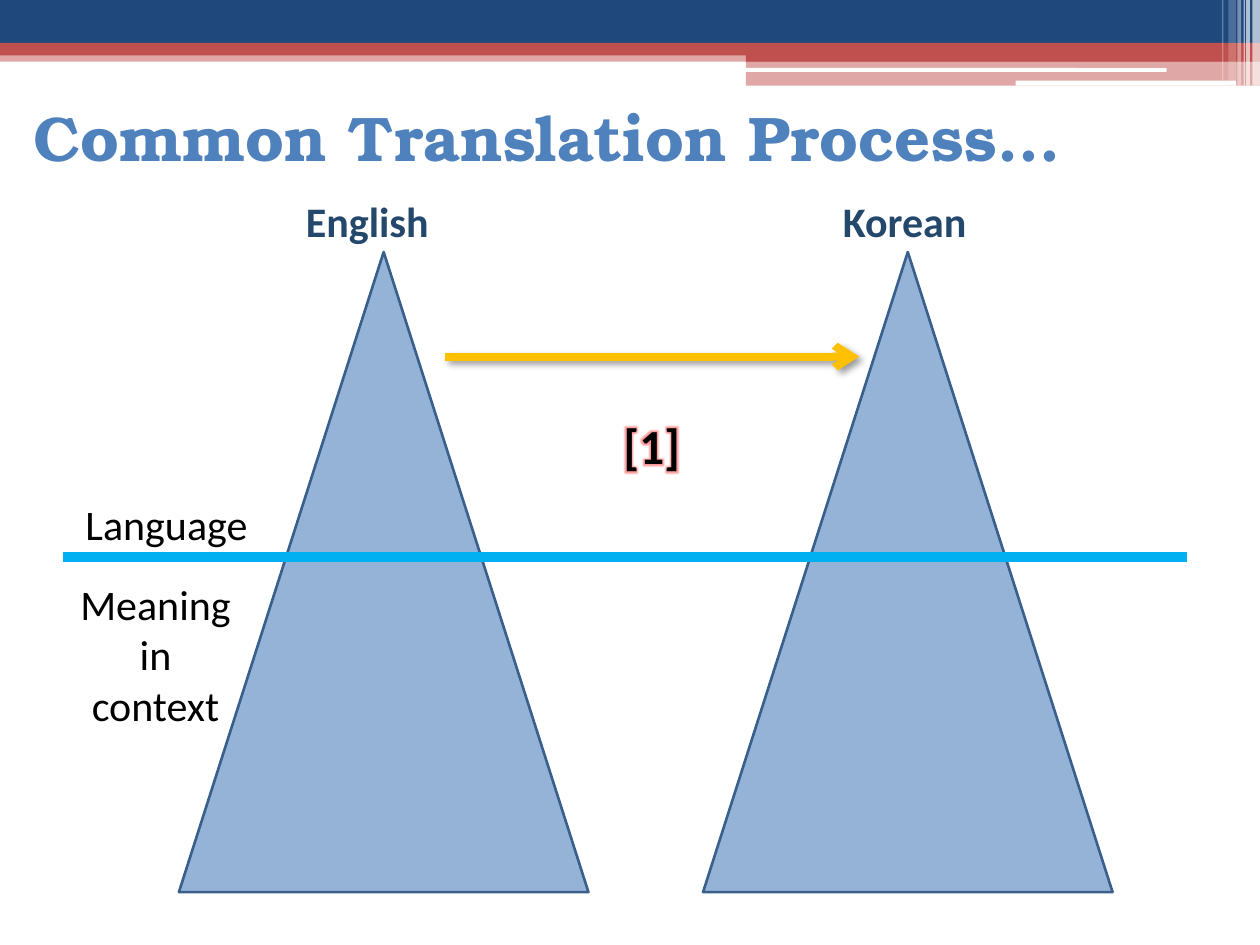
from dataclasses import dataclass

from lxml import etree
from pptx import Presentation
from pptx.dml.color import RGBColor
from pptx.enum.shapes import MSO_CONNECTOR, MSO_SHAPE
from pptx.enum.text import MSO_ANCHOR, MSO_AUTO_SIZE, PP_ALIGN
from pptx.oxml.ns import qn
from pptx.util import Inches, Pt

RECTANGLE = MSO_SHAPE.RECTANGLE
ROUNDED = MSO_SHAPE.ROUNDED_RECTANGLE
TRIANGLE = MSO_SHAPE.ISOSCELES_TRIANGLE
STRAIGHT = MSO_CONNECTOR.STRAIGHT
LEFT, CENTER = PP_ALIGN.LEFT, PP_ALIGN.CENTER
TOP, MIDDLE = MSO_ANCHOR.TOP, MSO_ANCHOR.MIDDLE
FIT_SHAPE = MSO_AUTO_SIZE.SHAPE_TO_FIT_TEXT
NO_FIT = MSO_AUTO_SIZE.NONE


@dataclass(frozen=True)
class Theme:
    navy: str = "1F497D"
    red: str = "C0504D"
    white: str = "FFFFFF"
    black: str = "000000"
    title: str = "4F81BD"
    heading: str = "24486C"
    triangle: str = "95B3D7"
    outline: str = "3A5F8C"
    divider: str = "00B0F0"
    arrow: str = "FFC000"
    glow: str = "FF0000"
    title_font: str = "TeX Gyre Bonum"
    body_font: str = "Calibri"
    title_size: int = 36
    step_size: int = 28
    label_size: int = 24


@dataclass(frozen=True)
class Box:
    left: float
    top: float
    width: float
    height: float

    def inside(self, left, top, width, height):
        return Box(self.left + left, self.top + top, width, height)

    def lengths(self):
        return [Inches(value) for value in (self.left, self.top, self.width, self.height)]


THEME = Theme()


def add_color(parent, color, opacity):
    element = etree.SubElement(parent, qn("a:srgbClr"), val=color)
    etree.SubElement(element, qn("a:alpha"), val=str(opacity * 1000))


def add_block(slide, kind, box, color, opacity=100):
    shape = slide.shapes.add_shape(kind, *box.lengths())
    shape.shadow.inherit = False
    shape.fill.solid()
    shape.fill.fore_color.rgb = RGBColor.from_string(color)
    shape.line.fill.background()
    if opacity < 100:
        color_element = shape.fill._xPr.find(qn("a:solidFill"))[0]
        etree.SubElement(color_element, qn("a:alpha"), val=str(opacity * 1000))
    return shape


def add_text(slide, box, text, size, color=THEME.black, bold=False, font=THEME.body_font,
             wrap=False, align=LEFT, anchor=TOP, fit=FIT_SHAPE):
    shape = slide.shapes.add_textbox(*box.lengths())
    frame = shape.text_frame
    frame.text = text
    frame.word_wrap = wrap
    frame.auto_size = fit
    frame.vertical_anchor = anchor
    paragraph = frame.paragraphs[0]
    paragraph.alignment = align
    run = paragraph.runs[0]
    run.font.name = font
    run.font.size = Pt(size)
    run.font.bold = bold
    run.font.color.rgb = RGBColor.from_string(color)
    return run


def add_line(slide, box, color, width):
    left, top, length, height = box.lengths()
    connector = slide.shapes.add_connector(STRAIGHT, left, top, left + length, top + height)
    connector.line.color.rgb = RGBColor.from_string(color)
    connector.line.width = Pt(width)
    effects = etree.SubElement(connector._element.spPr, qn("a:effectLst"))
    return connector, effects


def add_banner(slide, box):
    accent_left = 5.92
    accent_width = box.width - accent_left
    bands = [
        (0, 0.4, box.width, 0.09, THEME.red, 50),
        (0, 0, box.width, 0.34, THEME.navy, 100),
        (0, 0.34, box.width, 0.1, THEME.red, 100),
        (accent_left, 0.39, accent_width, 0.1, THEME.red, 100),
        (accent_left, 0.48, accent_width, 0.2, THEME.red, 50),
    ]
    for left, top, width, height, color, opacity in bands:
        add_block(slide, RECTANGLE, box.inside(left, top, width, height), color, opacity)

    for left, top, width, height in [(5.91, 0.54, 3.35, 0.03), (8.06, 0.64, 1.75, 0.04)]:
        add_block(slide, ROUNDED, box.inside(left, top, width, height), THEME.white)

    stripes = [
        (9.94, 0.06, 0.68, 65),
        (9.89, 0.03, 0.68, 65),
        (9.87, 0.01, 0.68, 60),
        (9.82, 0.03, 0.68, 40),
        (9.75, 0.06, 0.64, 20),
        (9.7, 0.01, 0.64, 30),
    ]
    for left, width, height, opacity in stripes:
        add_block(slide, RECTANGLE, box.inside(left, 0, width, height), THEME.white, opacity)


def add_title(slide, box):
    add_text(slide, box, "Common Translation Process…", THEME.title_size, THEME.title, True,
             THEME.title_font, wrap=True, anchor=MIDDLE, fit=NO_FIT)


def add_triangle(slide, box):
    triangle = add_block(slide, TRIANGLE, box, THEME.triangle)
    triangle.line.color.rgb = RGBColor.from_string(THEME.outline)
    triangle.line.width = Pt(1.5)


def add_levels(slide, box):
    add_line(slide, box.inside(0, 0.51, box.width, 0), THEME.divider, 6)
    add_text(slide, box.inside(0.08, 0, 1.53, 0.5), "Language", THEME.label_size)
    add_text(slide, box.inside(-0.03, 0.63, 1.53, 1.31), "Meaning in context",
             THEME.label_size, wrap=True, align=CENTER)


def add_transfer(slide, box):
    arrow, effects = add_line(slide, box.inside(0, 0, box.width, 0), THEME.arrow, 4.5)
    etree.SubElement(arrow.line._get_or_add_ln(), qn("a:tailEnd"), type="arrow")
    shadow = etree.SubElement(effects, qn("a:outerShdw"), blurRad=str(Pt(4)),
                              dist=str(Pt(3)), dir=str(45 * 60000), rotWithShape="0")
    add_color(shadow, THEME.black, 40)

    step = add_text(slide, box.inside(1.32, 0.42, 0.66, 0.57), "[1]", THEME.step_size, bold=True)
    glow_effects = etree.Element(qn("a:effectLst"))
    glow = etree.SubElement(glow_effects, qn("a:glow"), rad=str(Pt(5)))
    add_color(glow, THEME.glow, 40)
    step.font._element.find(qn("a:solidFill")).addnext(glow_effects)


def add_diagram(slide, box):
    languages = [("English", 0.92, 1.83, 1.38), ("Korean", 5.08, 6.09, 1.32)]
    for name, triangle_left, label_left, label_width in languages:
        add_triangle(slide, box.inside(triangle_left, 0.5, 3.25, 5.08))
        add_text(slide, box.inside(label_left, 0, label_width, 0.5), name,
                 THEME.label_size, THEME.heading, True)
    add_levels(slide, box.inside(0, 2.41, box.width, 1.94))
    add_transfer(slide, box.inside(3.03, 1.33, 3.29, 0.99))


def main():
    presentation = Presentation()
    presentation.slide_width = Inches(10)
    presentation.slide_height = Inches(7.5)
    slide = presentation.slides.add_slide(presentation.slide_layouts[6])
    add_banner(slide, Box(0, 0, 10, 0.68))
    add_diagram(slide, Box(0.5, 1.5, 8.92, 5.58))
    add_title(slide, Box(0.17, 0.5, 9, 1.17))
    presentation.save("out.pptx")


if __name__ == "__main__":
    main()
